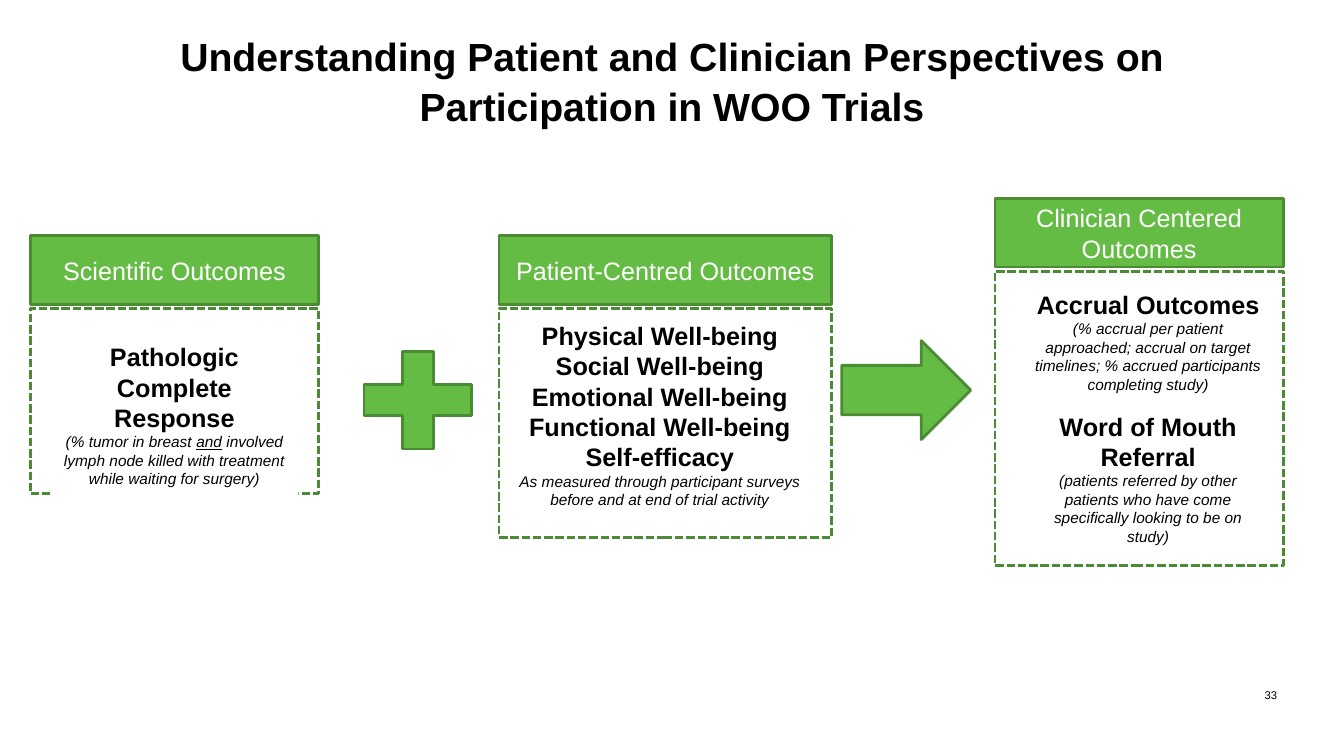
from pptx import Presentation
from pptx.dml.color import RGBColor
from pptx.enum.dml import MSO_LINE
from pptx.enum.shapes import MSO_SHAPE
from pptx.enum.text import MSO_ANCHOR, MSO_AUTO_SIZE, PP_ALIGN
from pptx.util import Inches, Pt

RECT = MSO_SHAPE.RECTANGLE
PLUS = MSO_SHAPE.MATH_PLUS
ARROW = MSO_SHAPE.RIGHT_ARROW
DASH = MSO_LINE.SQUARE_DOT
TOP, MIDDLE, BOTTOM = MSO_ANCHOR.TOP, MSO_ANCHOR.MIDDLE, MSO_ANCHOR.BOTTOM
CENTER, RIGHT = PP_ALIGN.CENTER, PP_ALIGN.RIGHT
FIXED = MSO_AUTO_SIZE.NONE

SLIDE_W, SLIDE_H = Inches(13.33), Inches(7.5)
GREEN, DARK_GREEN, WHITE, BLACK = "65BC45", "4B8B33", "FFFFFF", "000000"
HEADER_H = 9.07
BODY_OFFSET = 9.6

HEADING = {"size": 18, "bold": True}
DETAIL = {"size": 11, "italic": True}

OUTCOMES = [
    {
        "header": "Scientific Outcomes",
        "left": 2.25, "top": 31.2, "width": 21.45, "height": 24.53,
        "note": (3.75, 44.53, 18.45, 20.93),
        "paragraphs": [
            [("Pathologic Complete Response", HEADING)],
            [("(% tumor in breast ", DETAIL),
             ("and", {**DETAIL, "underline": True}),
             (" involved lymph node killed with treatment while waiting for surgery)", DETAIL)],
        ],
    },
    {
        "header": "Patient-Centred Outcomes",
        "left": 37.13, "top": 31.2, "width": 24.75, "height": 30.27,
        "note": (37.28, 41.73, 23.63, 26.53),
        "paragraphs": [
            *[[(name, HEADING)] for name in (
                "Physical Well-being", "Social Well-being", "Emotional Well-being",
                "Functional Well-being", "Self-efficacy")],
            [("As measured through participant surveys before and at end of trial activity", DETAIL)],
        ],
    },
    {
        "header": "Clinician Centered Outcomes",
        "left": 74.03, "top": 26.27, "width": 21.45, "height": 38.93,
        "note": (76.2, 37.6, 18.45, 36.53),
        "gaps": {2: 12.5},
        "paragraphs": [
            [("Accrual Outcomes", HEADING)],
            [("(% accrual per patient approached; accrual on target timelines; "
              "% accrued participants completing study)", DETAIL)],
            [("Word of Mouth Referral", HEADING)],
            [("(patients referred by other patients who have come specifically "
              "looking to be on study)", DETAIL)],
        ],
    },
]


def color(hex_value):
    return RGBColor.from_string(hex_value)


def area(left, top, width, height):
    return (int(SLIDE_W * left / 100), int(SLIDE_H * top / 100),
            int(SLIDE_W * width / 100), int(SLIDE_H * height / 100))


def add_run(paragraph, text, size=18, ink=BLACK, bold=False, italic=False, underline=False):
    run = paragraph.add_run()
    run.text = text
    font = run.font
    font.name, font.size = "Arial", Pt(size)
    font.bold, font.italic, font.underline = bold, italic, underline
    font.color.rgb = color(ink)


def write(frame, paragraphs, align=CENTER, anchor=TOP, margins=True, spacing=1.0, gaps=None):
    frame.word_wrap = True
    frame.auto_size = FIXED
    frame.vertical_anchor = anchor
    if not margins:
        frame.margin_left = frame.margin_right = frame.margin_top = frame.margin_bottom = 0
    for index, runs in enumerate(paragraphs):
        paragraph = frame.add_paragraph() if index else frame.paragraphs[0]
        paragraph.alignment = align
        paragraph.line_spacing = spacing
        paragraph.space_before = Pt((gaps or {}).get(index, 0))
        for text, style in runs:
            add_run(paragraph, text, **style)


def add_block(slide, kind, bounds, fill, outline=None, dash=None):
    block = slide.shapes.add_shape(kind, *area(*bounds))
    block.shadow.inherit = False
    block.fill.solid()
    block.fill.fore_color.rgb = color(fill)
    if outline:
        block.line.color.rgb = color(outline)
        block.line.width = Pt(2)
        if dash:
            block.line.dash_style = dash
    else:
        block.line.fill.background()
    return block


def add_outcome(slide, outcome):
    left, top, width = outcome["left"], outcome["top"], outcome["width"]
    add_block(slide, RECT, (left, top + BODY_OFFSET, width, outcome["height"]),
              WHITE, DARK_GREEN, DASH)
    header = add_block(slide, RECT, (left, top, width, HEADER_H), GREEN, DARK_GREEN)
    write(header.text_frame, [[(outcome["header"], {"ink": WHITE})]], anchor=MIDDLE)
    note = add_block(slide, RECT, outcome["note"], WHITE)
    write(note.text_frame, outcome["paragraphs"], gaps=outcome.get("gaps"))


def add_title(slide, text):
    title = slide.shapes.title
    title.left, title.top, title.width, title.height = area(5, 3.73, 90, 6.8)
    write(title.text_frame, [[(text, {"size": 28, "bold": True})]],
          margins=False, spacing=1.08)


def add_page_number(slide, number):
    box = slide.shapes.add_textbox(*area(71.7, 87.47, 23.33, 5.33))
    write(box.text_frame, [[(number, {"size": 8})]], align=RIGHT, anchor=BOTTOM, margins=False)


def main():
    deck = Presentation()
    deck.slide_width, deck.slide_height = SLIDE_W, SLIDE_H
    slide = deck.slides.add_slide(deck.slide_layouts[5])
    add_title(slide, "Understanding Patient and Clinician Perspectives on Participation in WOO Trials")
    for outcome in OUTCOMES:
        add_outcome(slide, outcome)
    add_block(slide, PLUS, (25.65, 44.13, 10.88, 17.6), GREEN, DARK_GREEN)
    add_block(slide, ARROW, (62.63, 45.07, 9.6, 13.07), GREEN, DARK_GREEN)
    add_page_number(slide, "33")
    deck.save("out.pptx")


if __name__ == "__main__":
    main()
